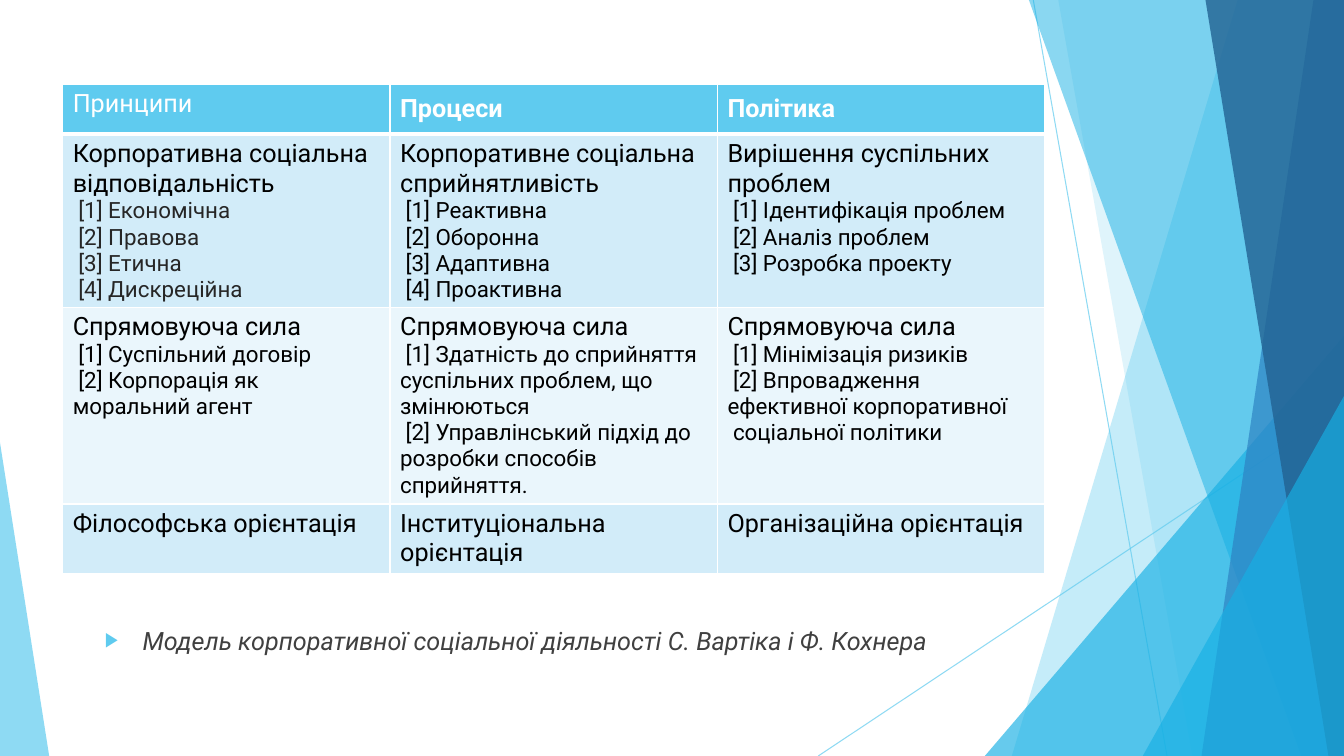
from lxml import etree
from pptx import Presentation
from pptx.dml.color import RGBColor
from pptx.enum.shapes import MSO_CONNECTOR, MSO_SHAPE
from pptx.enum.text import MSO_ANCHOR, MSO_AUTO_SIZE
from pptx.oxml.ns import qn
from pptx.util import Cm, Pt

STRAIGHT = MSO_CONNECTOR.STRAIGHT
TRIANGLE = MSO_SHAPE.ISOSCELES_TRIANGLE
TOP, MIDDLE = MSO_ANCHOR.TOP, MSO_ANCHOR.MIDDLE
NO_AUTOFIT = MSO_AUTO_SIZE.NONE

SKY = RGBColor(0x5F, 0xCB, 0xEF)
CYAN = RGBColor(0x17, 0xB0, 0xE4)
BLUE = RGBColor(0x2E, 0x83, 0xC3)
NAVY = RGBColor(0x22, 0x62, 0x92)
BAND_DARK = RGBColor(0xD2, 0xEC, 0xF9)
BAND_LIGHT = RGBColor(0xEA, 0xF6, 0xFC)
WHITE = RGBColor(0xFF, 0xFF, 0xFF)
BLACK = RGBColor(0, 0, 0)
CHARCOAL = RGBColor(0x26, 0x26, 0x26)
GREY = RGBColor(0x40, 0x40, 0x40)
FONT = "Roboto"

CAPTION = "Модель корпоративної соціальної діяльності С. Вартіка і Ф. Кохнера"
HEADINGS = ["Принципи", "Процеси", "Політика"]
MODEL = [
    [
        ["Корпоративна соціальна відповідальність", " [1] Економічна",
         " [2] Правова", " [3] Етична", " [4] Дискреційна"],
        ["Корпоративне соціальна сприйнятливість", " [1] Реактивна",
         " [2] Оборонна", " [3] Адаптивна", " [4] Проактивна"],
        ["Вирішення суспільних проблем", " [1] Ідентифікація проблем",
         " [2] Аналіз проблем", " [3] Розробка проекту"],
    ],
    [
        ["Спрямовуюча сила", " [1] Суспільний договір",
         " [2] Корпорація як моральний агент"],
        ["Спрямовуюча сила",
         " [1] Здатність до сприйняття суспільних проблем, що змінюються",
         " [2] Управлінський підхід до розробки способів сприйняття."],
        ["Спрямовуюча сила", " [1] Мінімізація ризиків",
         " [2] Впровадження ефективної корпоративної",
         " соціальної політики"],
    ],
    [["Філософська орієнтація"], ["Інституціональна орієнтація"],
     ["Організаційна орієнтація"]],
]

WIDTH, HEIGHT = 33.87, 19.05
COLUMN_WIDTH = 8.25
ROW_HEIGHTS = [1.25, 4.37, 4.95, 1.73]
RAYS = [((26.04, 0), (29.41, HEIGHT)), ((WIDTH, 10.24), (20.62, HEIGHT))]
# fmt: off
FACETS = [
    ("band", 31.19, 25.5, SKY, 36),
    ("band", 26.67, 30.05, SKY, 20),
    ("corner", 24.82, 8.46, CYAN, 66),
    ("band", 25.93, 32.79, CYAN, 50),
    ("band", 33.1, 30.28, BLUE, 70),
    ("band", 30.38, 33.48, NAVY, 80),
    ("corner", 28.8, 9.98, CYAN, 66),
]
LEFT_WEDGE = (1.24, 11.15)


def set_opacity(fill_owner, percent):
    color = next(fill_owner.iter(qn("a:srgbClr")))
    etree.SubElement(color, qn("a:alpha"), val=str(percent * 1000))


def paint(facet, color, opacity):
    facet.shadow.inherit = False
    facet.fill.solid()
    facet.fill.fore_color.rgb = color
    facet.line.fill.background()
    set_opacity(facet._element.spPr, opacity)


def add_ray(shapes, start, end):
    ray = shapes.add_connector(STRAIGHT, *map(Cm, start + end))
    ray.line.color.rgb = SKY
    ray.line.width = Pt(0.75)
    set_opacity(ray._element.spPr, 70)
    etree.SubElement(ray._element.spPr, qn("a:effectLst"))


def add_band(shapes, top_x, bottom_x):
    outline = shapes.build_freeform(Cm(top_x), 0)
    corners = [(WIDTH, 0), (WIDTH, HEIGHT), (bottom_x, HEIGHT)]
    outline.add_line_segments([(Cm(x), Cm(y)) for x, y in corners], close=True)
    return outline.convert_to_shape()


def add_corner(shapes, left, top, right, apex):
    corner = shapes.add_shape(TRIANGLE, Cm(left), Cm(top), Cm(right - left), Cm(HEIGHT - top))
    corner.adjustments[0] = apex
    return corner


def write(paragraph, text, size=18, color=BLACK, bold=False, italic=False):
    run = paragraph.add_run()
    run.text = text
    run.font.name = FONT
    run.font.size = Pt(size)
    run.font.color.rgb = color
    run.font.bold = bold
    run.font.italic = italic


def add_bullet(paragraph):
    properties = paragraph._p.get_or_add_pPr()
    properties.set("marL", str(Cm(0.95)))
    properties.set("indent", str(-Cm(0.95)))
    bullet_color = etree.SubElement(properties, qn("a:buClr"))
    etree.SubElement(bullet_color, qn("a:srgbClr"), val=str(SKY))
    etree.SubElement(properties, qn("a:buSzPct"), val="80000")
    etree.SubElement(properties, qn("a:buFont"), typeface="Arial")
    etree.SubElement(properties, qn("a:buChar"), char="▶")


def style_cell(cell, color, bottom_width=1):
    properties = cell._tc.get_or_add_tcPr()
    widths = {"a:lnL": 1, "a:lnR": 1, "a:lnT": 1, "a:lnB": bottom_width}
    for side, width in widths.items():
        border = etree.SubElement(properties, qn(side), w=str(Pt(width)))
        border_fill = etree.SubElement(border, qn("a:solidFill"))
        etree.SubElement(border_fill, qn("a:srgbClr"), val=str(WHITE))
    cell.fill.solid()
    cell.fill.fore_color.rgb = color


def add_decoration(shapes):
    for start, end in RAYS:
        add_ray(shapes, start, end)
    for kind, first, second, color, opacity in FACETS:
        if kind == "band":
            facet = add_band(shapes, first, second)
        else:
            facet = add_corner(shapes, first, second, WIDTH, 1)
        paint(facet, color, opacity)
    right, top = LEFT_WEDGE
    paint(add_corner(shapes, 0, top, right, 0), SKY, 70)


def add_caption(body):
    body.left, body.top, body.width, body.height = Cm(2.39), Cm(15.62), Cm(23.88), Cm(10.77)
    body.text_frame.auto_size = NO_AUTOFIT
    paragraph = body.text_frame.paragraphs[0]
    paragraph.space_before = Pt(10)
    add_bullet(paragraph)
    write(paragraph, CAPTION, color=GREY, italic=True)


def add_model(shapes):
    model = shapes.add_table(len(ROW_HEIGHTS), len(HEADINGS), Cm(1.58), Cm(2.13),
                             Cm(COLUMN_WIDTH * len(HEADINGS)), Cm(sum(ROW_HEIGHTS))).table
    for column in model.columns:
        column.width = Cm(COLUMN_WIDTH)
    for row, height in zip(model.rows, ROW_HEIGHTS):
        row.height = Cm(height)
    for c, heading in enumerate(HEADINGS):
        cell = model.cell(0, c)
        style_cell(cell, SKY, bottom_width=3)
        cell.vertical_anchor = MIDDLE if c else TOP
        write(cell.text_frame.paragraphs[0], heading, color=WHITE, bold=c > 0)
    for r, entries in enumerate(MODEL, start=1):
        for c, (topic, *points) in enumerate(entries):
            cell = model.cell(r, c)
            style_cell(cell, BAND_DARK if r % 2 else BAND_LIGHT)
            write(cell.text_frame.paragraphs[0], topic)
            for point in points:
                write(cell.text_frame.add_paragraph(), point, size=16,
                      color=CHARCOAL if (r, c) == (1, 0) else BLACK)


def main():
    deck = Presentation()
    deck.slide_width, deck.slide_height = Cm(WIDTH), Cm(HEIGHT)
    slide = deck.slides.add_slide(deck.slide_layouts[1])
    title, body = slide.placeholders
    tree = title._element.getparent()
    tree.remove(title._element)
    add_decoration(slide.shapes)
    add_caption(body)
    tree.append(body._element)
    add_model(slide.shapes)
    deck.save("out.pptx")


if __name__ == "__main__":
    main()
